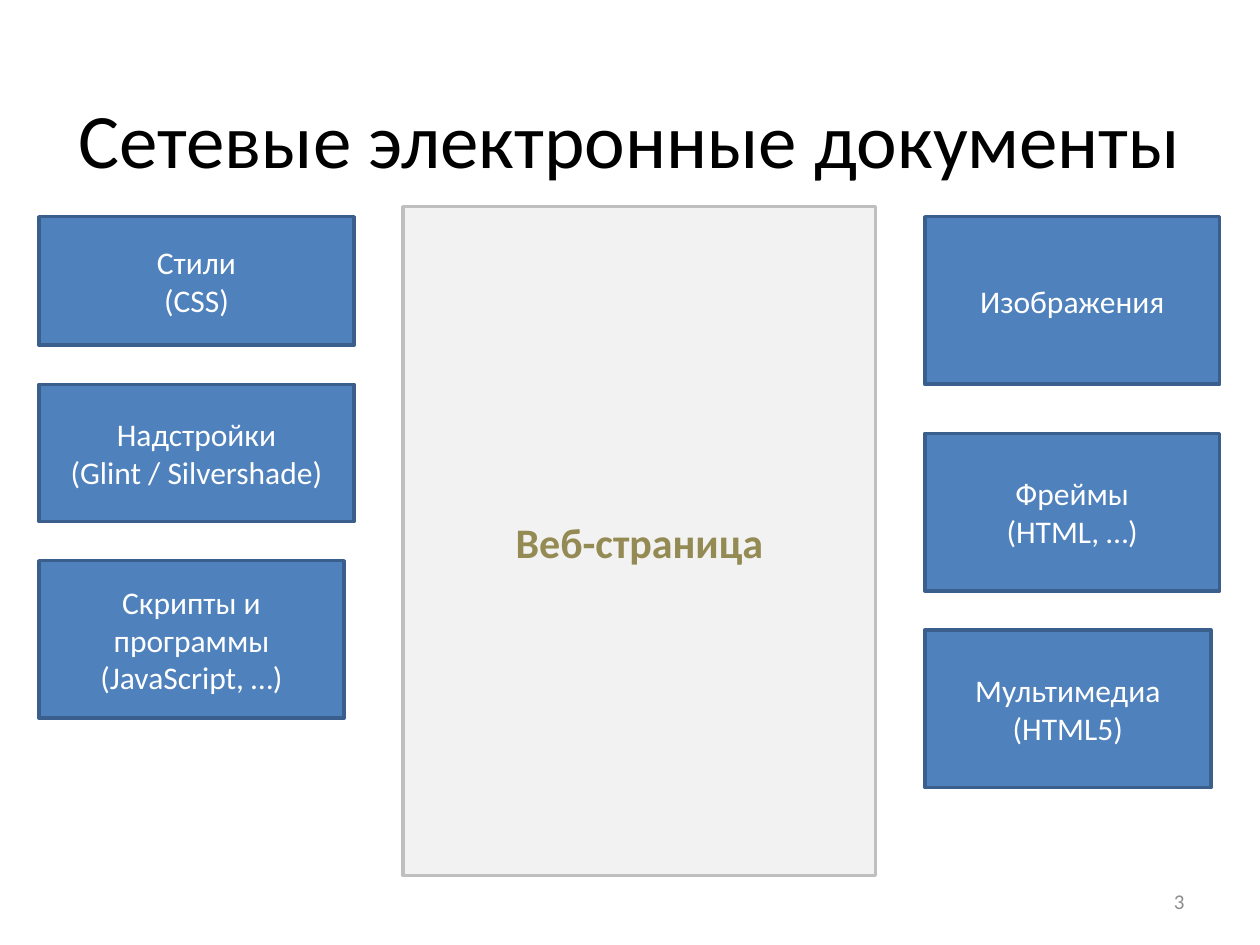
from pptx import Presentation
from pptx.dml.color import RGBColor
from pptx.enum.shapes import MSO_SHAPE
from pptx.enum.text import MSO_ANCHOR, PP_ALIGN
from pptx.util import Inches, Pt

# Content
TITLE = "Сетевые электронные документы"
PAGE_NUMBER = "3"
CENTRE = ["Веб-страница"]

# Each column: left edge, then boxes as (lines, width, height, gap above)
COLUMN_TOP = 1.72
COLUMNS = [
    (0.31, [
        (["Стили", "(CSS)"], 2.5, 1.02, 0),
        (["Надстройки", "(Glint / Silvershade)"], 2.5, 1.09, 0.31),
        (["Скрипты и программы", "(JavaScript, …)"], 2.42, 1.25, 0.31),
    ]),
    (7.34, [
        (["Изображения"], 2.34, 1.33, 0),
        (["Фреймы", "(HTML, …)"], 2.34, 1.25, 0.39),
        (["Мультимедиа", "(HTML5)"], 2.27, 1.25, 0.31),
    ]),
]


def colour(value):
    return RGBColor.from_string(value)


def write(shape, lines, size, ink, align=PP_ALIGN.CENTER, bold=False):
    frame = shape.text_frame
    frame.word_wrap = True
    frame.vertical_anchor = MSO_ANCHOR.MIDDLE
    for index, line in enumerate(lines):
        para = frame.add_paragraph() if index else frame.paragraphs[0]
        para.alignment = align
        span = para.add_run()
        span.text = line
        span.font.name = "Calibri"
        span.font.size = Pt(size)
        span.font.bold = bold
        span.font.color.rgb = colour(ink)


def add_block(page, area, fill, outline):
    block = page.shapes.add_shape(MSO_SHAPE.RECTANGLE, *map(Inches, area))
    block.shadow.inherit = False
    block.fill.solid()
    block.fill.fore_color.rgb = colour(fill)
    block.line.color.rgb = colour(outline)
    block.line.width = Pt(2)
    return block


def main():
    deck = Presentation()
    deck.slide_width, deck.slide_height = Inches(10), Inches(7.5)
    page = deck.slides.add_slide(deck.slide_layouts[5])

    # Title
    title = page.shapes.title
    title.left, title.top = Inches(0.5), Inches(0.47)
    title.width, title.height = Inches(9), Inches(1.25)
    write(title, [TITLE], 44, "000000")

    # Page number
    number = page.shapes.add_textbox(*map(Inches, (7.17, 6.95, 2.33, 0.4)))
    write(number, [PAGE_NUMBER], 12, "8C8C8C", PP_ALIGN.RIGHT)

    # Web page in the centre
    centre = add_block(page, (3.2, 1.64, 3.75, 5.31), "F2F2F2", "BFBFBF")
    write(centre, CENTRE, 24, "948A54", bold=True)

    # Components stacked on either side
    for left, boxes in COLUMNS:
        top = COLUMN_TOP
        for lines, width, height, gap in boxes:
            top += gap
            box = add_block(page, (left, top, width, height), "4F81BD", "3A5F8C")
            write(box, lines, 18, "FFFFFF")
            top += height

    deck.save("out.pptx")


if __name__ == "__main__":
    main()
